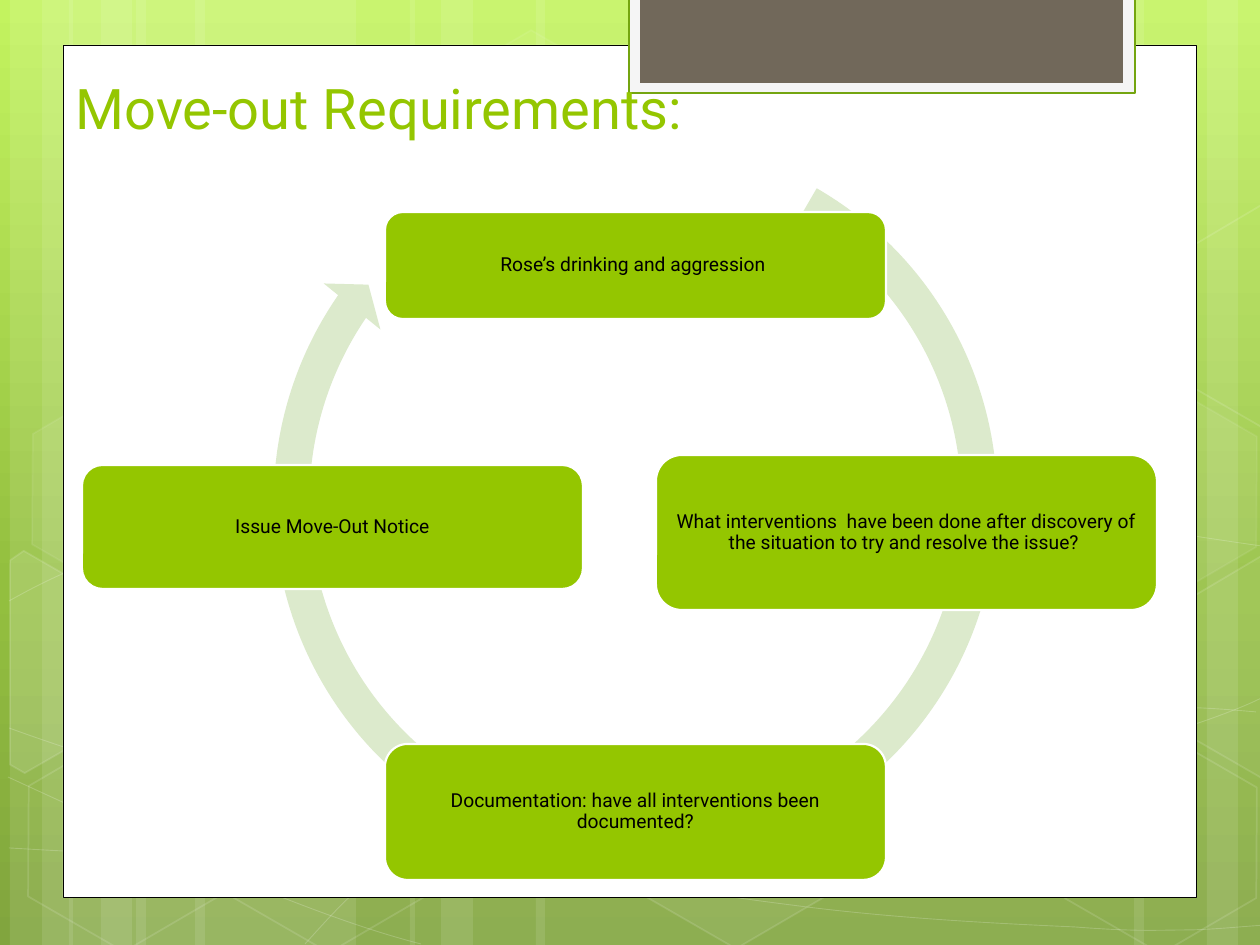
from copy import deepcopy

from lxml import etree
from pptx import Presentation
from pptx.dml.color import RGBColor
from pptx.enum.shapes import MSO_SHAPE
from pptx.enum.text import MSO_ANCHOR, MSO_AUTO_SIZE, PP_ALIGN
from pptx.oxml.ns import qn
from pptx.util import Pt

RECTANGLE, HEXAGON = MSO_SHAPE.RECTANGLE, MSO_SHAPE.HEXAGON
ROUNDED, CIRCULAR_ARROW = MSO_SHAPE.ROUNDED_RECTANGLE, MSO_SHAPE.CIRCULAR_ARROW
MIDDLE, BOTTOM = MSO_ANCHOR.MIDDLE, MSO_ANCHOR.BOTTOM
LEFT, CENTER = PP_ALIGN.LEFT, PP_ALIGN.CENTER
NO_FIT = MSO_AUTO_SIZE.NONE

PX = 914400 / 126
FONT = "Roboto"
COLORS = {
    "sky": "C3F35F", "leaf": "93BF3F", "moss": "81A53E",
    "white": "FFFFFF", "black": "000000", "paper": "F5F5F5",
    "edge": "74A510", "brown": "71685A", "green": "94C600", "pale": "DCEACC",
}


def emu(*lengths):
    return [round(length * PX) for length in lengths]


def paint(shape, fill=None, line=None, width=1, fill_alpha=100, line_alpha=100):
    """Set fill and outline by colour name, with opacity in percent."""
    shape.shadow.inherit = False
    if fill:
        shape.fill.solid()
        shape.fill.fore_color.rgb = RGBColor.from_string(COLORS[fill])
    else:
        shape.fill.background()
    if line:
        shape.line.color.rgb = RGBColor.from_string(COLORS[line])
        shape.line.width = Pt(width)
    else:
        shape.line.fill.background()
    for parent, alpha in (("", fill_alpha), ("a:ln/", line_alpha)):
        color = shape.element.spPr.find(
            "/".join(qn(tag) for tag in (parent + "a:solidFill/a:srgbClr").split("/")))
        if color is not None and alpha < 100:
            etree.SubElement(color, qn("a:alpha")).set("val", str(alpha * 1000))


deck = Presentation()
deck.slide_width, deck.slide_height = emu(1260, 945)
page = deck.slides.add_slide(deck.slide_layouts[5])
shapes = page.shapes

# Background gradient, top to bottom
backdrop = page.background.fill
backdrop.gradient()
backdrop.gradient_angle = 270
stop_list = page.element.find(".//" + qn("a:gsLst"))
stop_list.insert(1, deepcopy(stop_list[0]))
for stop, (position, name) in zip(
        backdrop.gradient_stops, ((0, "sky"), (0.62, "leaf"), (1, "moss"))):
    stop.position = position
    stop.color.rgb = RGBColor.from_string(COLORS[name])

# Translucent vertical bars: left, width
BARS = [(136, 220), (10, 63), (42, 104), (195, 220), (69, 63), (101, 104),
        (924, 220), (1207, 63), (1134, 104), (536, 388), (410, 63), (441, 104)]
for left, width in BARS:
    bar = shapes.add_shape(RECTANGLE, *emu(left, 0, width, 945))
    paint(bar, "white", fill_alpha=10)

# Thin curves: a start point, then three points for each Bezier segment
CURVES = [
    [(9, 848), (77, 852), (145, 856), (239, 854), (334, 853), (451, 851), (577, 838),
     (703, 825), (882, 800), (998, 777), (1113, 753), (1231, 716), (1269, 694)],
    [(9, 601), (45, 581), (82, 562), (152, 543), (224, 524), (326, 499), (437, 488),
     (549, 479), (685, 478), (824, 488), (963, 498), (1193, 537), (1269, 547)],
    [(8, 777), (160, 847), (311, 916), (421, 944)],
    [(9, 728), (48, 742), (88, 756), (161, 776), (234, 795), (344, 827), (450, 848),
     (554, 869), (687, 892), (791, 905), (896, 919), (1008, 924), (1075, 927),
     (1140, 932), (1158, 930), (1191, 930), (1223, 929), (1246, 926), (1269, 925)],
    [(305, 944), (328, 919), (350, 893), (381, 871), (411, 848), (454, 823), (489, 805),
     (524, 788), (546, 780), (592, 767), (638, 755), (722, 737), (766, 728),
     (811, 719), (818, 719), (857, 717), (896, 713), (958, 709), (1000, 708),
     (1045, 707), (1116, 708), (1116, 708), (1144, 708), (1173, 708), (1201, 708),
     (1223, 709), (1244, 711), (1256, 712)],
]
for knots in CURVES:
    builder = shapes.build_freeform(*knots[0], scale=PX)
    builder.add_line_segments(knots[1:], close=False)
    curve = builder.convert_to_shape()
    path_element = curve.element.find(".//" + qn("a:path"))
    steps = path_element.findall(qn("a:lnTo"))
    for first in range(0, len(steps), 3):
        bezier = etree.SubElement(path_element, qn("a:cubicBezTo"))
        for step in steps[first:first + 3]:
            bezier.append(step[0])
            path_element.remove(step)
    paint(curve, line="white", width=0.5, line_alpha=20)

# Hexagons: left, top, fill opacity, line opacity
HEXAGONS = [(421, 45, 4, 8), (626, 742, 6, 12), (14, 745, 0, 12), (18, 393, 7, 8),
            (219, 746, 0, 12), (949, 571, 10, 12), (1051, 747, 0, 12), (1051, 396, 7, 8)]
for left, top, fill_alpha, line_alpha in HEXAGONS:
    hexagon = shapes.add_shape(HEXAGON, *emu(left, top, 220, 192))
    hexagon.adjustments[0] = 0.285
    hexagon.rotation = 30
    paint(hexagon, "white" if fill_alpha else None, "white", 1, fill_alpha, line_alpha)

# Hexagons cut by the slide edges: left, top, fill opacity, corners before turning
LEFT_CUT = [(0, 15), (7, 0), (119, 0), (174, 97), (119, 192), (102, 192)]
RIGHT_CUT = [(0, 96), (54, 0), (65, 0), (171, 183), (165, 192), (54, 192)]
CUT_HEXAGONS = [(-42, 578, 10, LEFT_CUT), (1155, 559, 4, RIGHT_CUT), (1155, 208, 0, RIGHT_CUT)]
for left, top, fill_alpha, corners in CUT_HEXAGONS:
    builder = shapes.build_freeform(*corners[0], scale=PX)
    builder.add_line_segments(corners[1:], close=True)
    hexagon = builder.convert_to_shape(*emu(left, top))
    hexagon.rotation = 30
    paint(hexagon, "white" if fill_alpha else None, "white", 1, fill_alpha, 12)

# White sheet and the tab at its top
PANELS = [((63, 45, 1134, 853), "white", "black", 0.5),
          ((629, -3, 506, 96), "paper", "edge", 1.25),
          ((640, -3, 483, 86), "brown", None, 0)]
for frame, fill, line, width in PANELS:
    paint(shapes.add_shape(RECTANGLE, *emu(*frame)), fill, line, width)

# Title, brought in front of the sheet
title = shapes.title
title.element.getparent().append(title.element)
title.left, title.top, title.width, title.height = emu(63, 37, 1134, 110)
title.text_frame.text = "Move-out Requirements:"
title.text_frame.vertical_anchor = BOTTOM
title.text_frame.auto_size = NO_FIT
para = title.text_frame.paragraphs[0]
para.alignment = LEFT
para.font.name, para.font.size = FONT, Pt(32)
para.font.color.rgb = RGBColor.from_string(COLORS["green"])

# Cycle arrow and its four steps
arrow = shapes.add_shape(CIRCULAR_ARROW, *emu(255, 121, 761, 761))
for index, value in enumerate((0.047, 2.729, 128.717, 180.034, 0.048)):
    arrow.adjustments[index] = value
paint(arrow, "pale")

CYCLE = [
    (385, 212, 107, "Rose’s drinking and aggression "),
    (656, 455, 155, "What interventions  have been done after discovery of "
                    "the situation to try and resolve the issue? "),
    (385, 744, 136, "Documentation: have all interventions been documented?"),
    (82, 465, 124, "Issue Move-Out Notice"),
]
FRAME_FORMAT = {"word_wrap": True, "vertical_anchor": MIDDLE}
FRAME_FORMAT |= {f"margin_{side}": round(6 * PX) for side in ("left", "top", "right", "bottom")}
for left, top, height, words in CYCLE:
    box = shapes.add_shape(ROUNDED, *emu(left, top, 501, height))
    paint(box, "green", "white", 1.25)
    for key, value in FRAME_FORMAT.items():
        setattr(box.text_frame, key, value)
    box.text_frame.text = words
    para = box.text_frame.paragraphs[0]
    para.alignment, para.line_spacing = CENTER, 0.9
    para.font.name, para.font.size = FONT, Pt(11)
    para.font.color.rgb = RGBColor.from_string(COLORS["black"])

deck.save("out.pptx")
